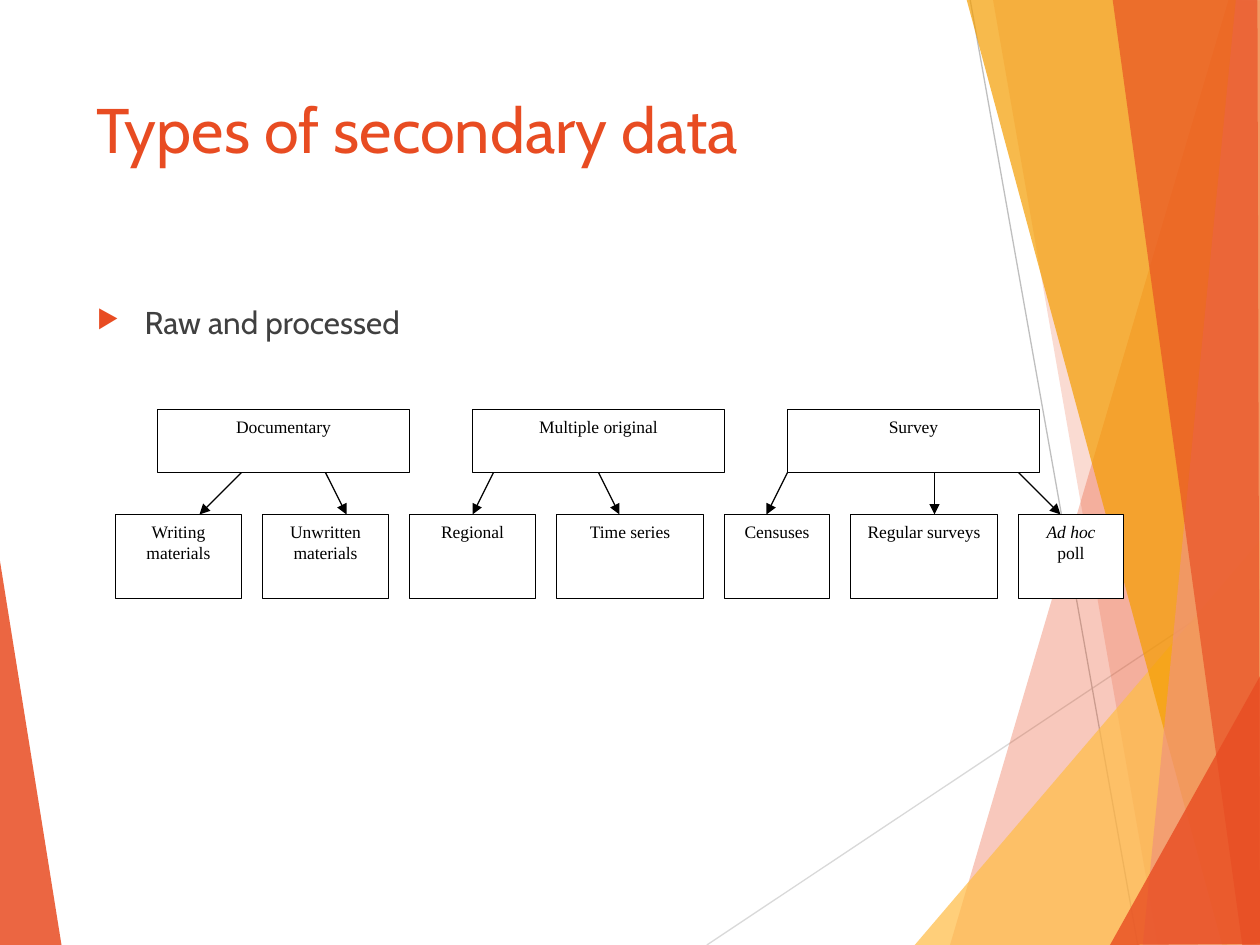
from itertools import accumulate

from lxml.etree import SubElement
from pptx import Presentation
from pptx.dml.color import RGBColor
from pptx.enum.shapes import MSO_CONNECTOR, MSO_SHAPE
from pptx.enum.text import MSO_ANCHOR, PP_ALIGN
from pptx.oxml.ns import qn
from pptx.util import Inches, Pt

COLORS = {
    "accent": "E84C22", "yellow": "FFBD47", "amber": "F49D00", "salmon": "F1947A",
    "body": "404040", "black": "000000", "white": "FFFFFF",
    "light_gray": "D9D9D9", "gray": "BFBFBF",
}
TITLE_FONT = {"name": "Cabin", "size": Pt(36)}
BODY_FONT = {"name": "Cabin", "size": Pt(18)}
BOX_FONT = {"name": "Times New Roman", "size": Pt(10)}

# The diagram sits on a grid of sixths of an inch
UNIT = 1 / 6
CATEGORY_TOP, CATEGORY_HEIGHT, CATEGORY_WIDTH = 19.5, 3, 12
TYPE_TOP, TYPE_HEIGHT, TYPE_GAP = 24.5, 4, 1
CATEGORIES = ["Documentary", "Multiple original", "Survey"]
# Paragraphs of (text, italic) runs, box width
TYPES = [
    ([[("Writing", False)], [("materials", False)]], 6),
    ([[("Unwritten", False)], [("materials", False)]], 6),
    ([[("Regional", False)]], 6),
    ([[("Time series", False)]], 7),
    ([[("Censuses", False)]], 5),
    ([[("Regular surveys", False)]], 7),
    ([[("Ad hoc ", True), ("poll", False)]], 5),
]
# Category index, start x, end x; one arrow for each type
ARROWS = [(0, 11.5, 9.5), (0, 15.5, 16.5), (1, 23.5, 22.5), (1, 28.5, 29.5),
          (2, 37.5, 36.5), (2, 44.5, 44.5), (2, 48.5, 50.5)]

# Colour, opacity in percent, corner points
LEFT_FACET = ("accent", 85, [(-0.01, 4.39), (0.49, 7.51), (-0.01, 7.5)])
RIGHT_FACETS = [
    ("accent", 30, [(9.75, 0), (7.54, 7.5), (10.02, 7.51), (10.01, 0.01)]),
    ("accent", 20, [(7.88, -0.01), (9.19, 7.5), (10.01, 7.5), (10.01, -0.01)]),
    ("yellow", 72, [(7.26, 7.5), (10, 4.29), (10.01, 7.5)]),
    ("amber", 70, [(7.67, -0.01), (9.7, 7.5), (10.01, 7.49), (10.01, -0.01)]),
    ("salmon", 70, [(9.81, -0.01), (9.07, 7.5), (10.01, 7.5), (10, -0.01)]),
    ("accent", 65, [(8.83, -0.01), (9.86, 7.5), (10, 7.5), (9.98, -0.01)]),
    ("accent", 80, [(8.81, 7.5), (10.01, 5.35), (10.01, 7.49)]),
]


def color(name):
    return RGBColor.from_string(COLORS[name])


def grid(units):
    return Inches(units * UNIT)


def set_attributes(target, values):
    for name, value in values.items():
        setattr(target, name, value)


def add_run(paragraph, text, font, color_name, italic=False):
    run = paragraph.add_run()
    run.text = text
    set_attributes(run.font, {**font, "italic": italic})
    run.font.color.rgb = color(color_name)


def add_facet(slide, color_name, opacity, points):
    corners = [(Inches(x), Inches(y)) for x, y in points]
    builder = slide.shapes.build_freeform(*corners[0], scale=1.0)
    builder.add_line_segments(corners[1:], close=True)
    shape = builder.convert_to_shape()
    shape.shadow.inherit = False
    shape.fill.solid()
    shape.fill.fore_color.rgb = color(color_name)
    shape.line.fill.background()
    fill_color = shape.fill._xPr.find(qn("a:solidFill"))[0]
    SubElement(fill_color, qn("a:alpha"), val=str(opacity * 1000))


def add_line(slide, start, end, color_name, arrow=False):
    line = slide.shapes.add_connector(MSO_CONNECTOR.STRAIGHT, *start, *end)
    line.line.color.rgb = color(color_name)
    line.line.width = Pt(0.75)
    if arrow:
        SubElement(line.line._get_or_add_ln(), qn("a:tailEnd"), type="triangle")
    SubElement(line._element.spPr, qn("a:effectLst"))
    return line


def add_text(slide, text, left, top, width, height, font, color_name):
    box = slide.shapes.add_textbox(*map(Inches, (left, top, width, height)))
    set_attributes(box.text_frame,
                   {"word_wrap": True, "vertical_anchor": MSO_ANCHOR.TOP})
    paragraph = box.text_frame.paragraphs[0]
    add_run(paragraph, text, font, color_name)
    return paragraph


def add_bullet(paragraph):
    paragraph.space_before = Pt(10)
    properties = paragraph._p.get_or_add_pPr()
    properties.set("marL", str(Inches(0.38)))
    properties.set("indent", str(-Inches(0.38)))
    bullet_color = SubElement(properties, qn("a:buClr"))
    SubElement(bullet_color, qn("a:srgbClr"), val=COLORS["accent"])
    SubElement(properties, qn("a:buSzPct"), val="80000")
    SubElement(properties, qn("a:buChar"), char="▶")


def add_box(slide, paragraphs, left, top, width, height):
    shape = slide.shapes.add_shape(
        MSO_SHAPE.RECTANGLE, *map(grid, (left, top, width, height)))
    shape.shadow.inherit = False
    shape.fill.solid()
    shape.fill.fore_color.rgb = color("white")
    shape.line.color.rgb = color("black")
    shape.line.width = Pt(0.75)
    frame = shape.text_frame
    set_attributes(frame, {"word_wrap": True, "vertical_anchor": MSO_ANCHOR.TOP})
    for index, runs in enumerate(paragraphs):
        paragraph = frame.add_paragraph() if index else frame.paragraphs[0]
        paragraph.alignment = PP_ALIGN.CENTER
        for text, italic in runs:
            add_run(paragraph, text, BOX_FONT, "black", italic)
    return shape


def is_middle(shape, x):
    return abs(shape.left + shape.width / 2 - grid(x)) < Inches(0.01)


def add_arrow(slide, category, type_box, start_x, end_x):
    arrow = add_line(slide,
                     (grid(start_x), grid(CATEGORY_TOP + CATEGORY_HEIGHT)),
                     (grid(end_x), grid(TYPE_TOP)), "black", arrow=True)
    if is_middle(category, start_x):
        arrow.begin_connect(category, 2)
    if is_middle(type_box, end_x):
        arrow.end_connect(type_box, 0)


def add_background(slide):
    add_facet(slide, *LEFT_FACET)
    add_line(slide, (Inches(5.61), Inches(7.5)), (Inches(10.01), Inches(4.57)),
             "light_gray")
    add_line(slide, (Inches(7.7), 0), (Inches(9.03), Inches(7.5)), "gray")
    for facet in RIGHT_FACETS:
        add_facet(slide, *facet)


def add_diagram(slide):
    categories = [
        add_box(slide, [[(name, False)]], 7.5 + 15 * index, CATEGORY_TOP,
                CATEGORY_WIDTH, CATEGORY_HEIGHT)
        for index, name in enumerate(CATEGORIES)]
    lefts = accumulate((width + TYPE_GAP for _, width in TYPES), initial=5.5)
    type_boxes = [
        add_box(slide, paragraphs, left, TYPE_TOP, width, TYPE_HEIGHT)
        for (paragraphs, width), left in zip(TYPES, lefts)]
    for (index, start_x, end_x), type_box in zip(ARROWS, type_boxes):
        add_arrow(slide, categories[index], type_box, start_x, end_x)


def main():
    presentation = Presentation()
    set_attributes(presentation,
                   {"slide_width": Inches(10), "slide_height": Inches(7.5)})
    slide = presentation.slides.add_slide(presentation.slide_layouts[6])

    # Angled facets behind the content
    add_background(slide)

    # Title and bullet
    add_text(slide, "Types of secondary data", 0.67, 0.67, 6.94, 1.44,
             TITLE_FONT, "accent")
    add_bullet(add_text(slide, "Raw and processed", 0.67, 2.36, 6.94, 4.24,
                        BODY_FONT, "body"))

    # Categories with their types
    add_diagram(slide)
    presentation.save("out.pptx")


if __name__ == "__main__":
    main()
